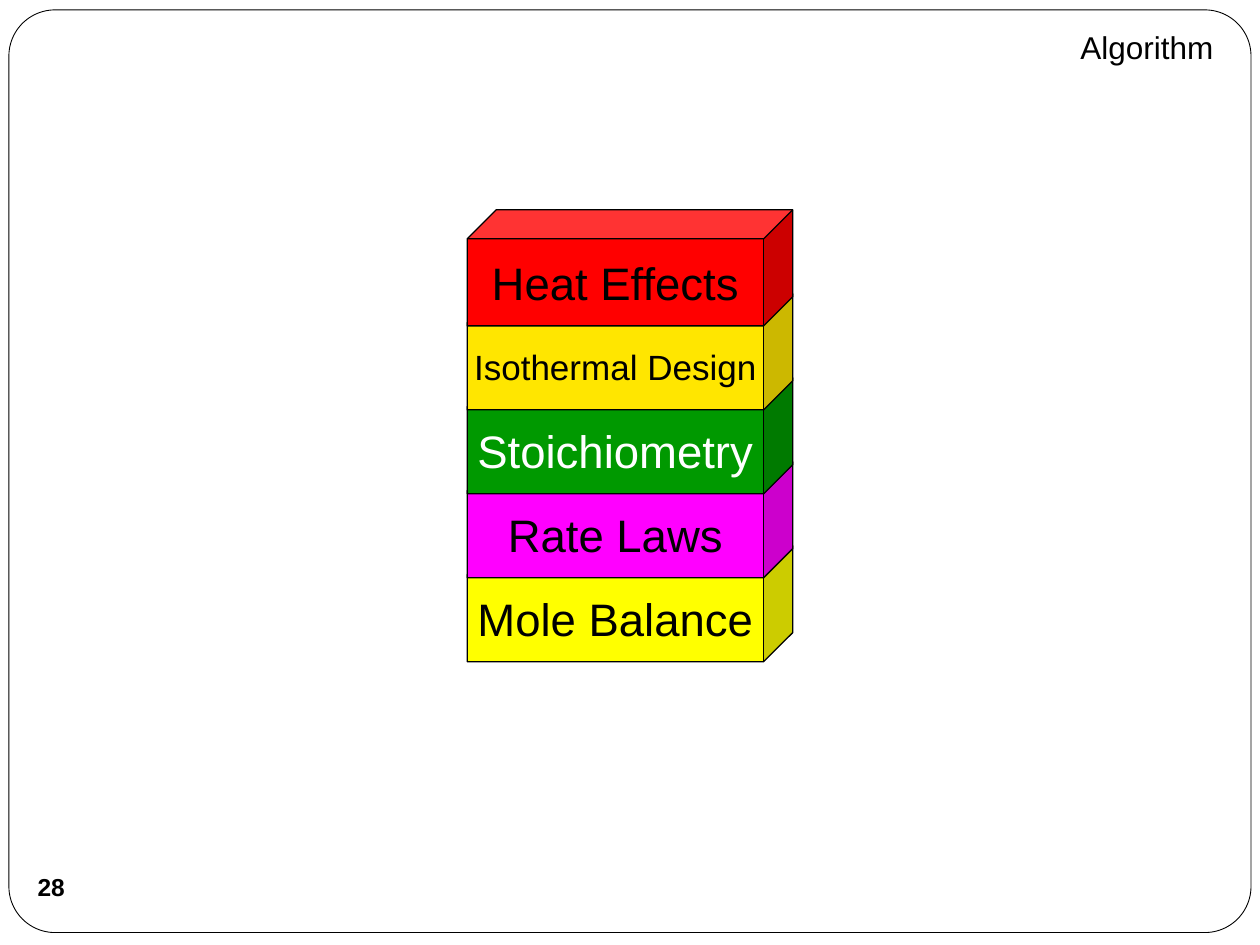
import pptx
import pptx.dml.color
import pptx.enum.shapes
import pptx.enum.text
import pptx.util

Cm = pptx.util.Cm
Pt = pptx.util.Pt
Shape = pptx.enum.shapes.MSO_SHAPE
Align = pptx.enum.text.PP_ALIGN
Anchor = pptx.enum.text.MSO_ANCHOR

BLOCKS = [
    ("Heat Effects", "FF0000", "000000", 26),
    ("Isothermal Design", "FFE600", "000000", 20),
    ("Stoichiometry", "009900", "FFFFFF", 26),
    ("Rate Laws", "FF00FF", "000000", 26),
    ("Mole Balance", "FFFF00", "000000", 26),
]


def color(value):
    return pptx.dml.color.RGBColor.from_string(value)


def add_figure(page, kind, box, fill, line_width=None):
    figure = page.shapes.add_shape(kind, *(Cm(length) for length in box))
    figure.shadow.inherit = False
    figure.fill.solid()
    figure.fill.fore_color.rgb = color(fill)
    if line_width is None:
        figure.line.fill.background()
    else:
        figure.line.color.rgb = color("000000")
        figure.line.width = Pt(line_width)
    return figure


def write(figure, text, size, ink="000000", align=Align.CENTER, bold=False,
          anchor=Anchor.MIDDLE, wrap=False):
    frame = figure.text_frame
    frame.word_wrap = wrap
    frame.vertical_anchor = anchor
    para = frame.paragraphs[0]
    para.text = text
    para.alignment = align
    para.font.name = "Arial"
    para.font.size = Pt(size)
    para.font.bold = bold
    para.font.color.rgb = color(ink)


def add_frame(page, box):
    frame = add_figure(page, Shape.ROUNDED_RECTANGLE, box, "FFFFFF", 0.5)
    frame.adjustments[0] = 0.05


def add_stack(page, box):
    left, top, width, height = box
    block_height = 2.34
    step = (height - block_height) / (len(BLOCKS) - 1)
    for index, (text, fill, ink, size) in reversed(list(enumerate(BLOCKS))):
        block_box = (left, top + index * step, width, block_height)
        block = add_figure(page, Shape.CUBE, block_box, fill, 0.75)
        block.adjustments[0] = 0.25
        write(block, text, size, ink)


def add_page_number(page, box, number):
    badge = add_figure(page, Shape.OVAL, box, "FFFFFF")
    frame = badge.text_frame
    frame.margin_left = frame.margin_right = 0
    frame.margin_top = frame.margin_bottom = 0
    write(badge, number, 14, bold=True)


def place_title(page, box, text):
    title = page.shapes.title
    title.left, title.top, title.width, title.height = (Cm(length) for length in box)
    title.text_frame.margin_right = Cm(0.43)
    write(title, text, 18, align=Align.RIGHT, anchor=Anchor.TOP, wrap=True)
    title.element.getparent().append(title.element)


def main():
    deck = pptx.Presentation()
    deck.slide_width = Cm(25.4)
    deck.slide_height = Cm(19.05)
    page = deck.slides.add_slide(deck.slide_layouts.get_by_name("Title Only"))
    add_frame(page, (0.18, 0.2, 25.04, 18.6))
    add_stack(page, (9.42, 4.23, 6.56, 9.11))
    add_page_number(page, (0.4, 17.25, 1.27, 1.27), "28")
    place_title(page, (17.88, 0.43, 7.01, 1.02), "Algorithm")
    deck.save("out.pptx")


if __name__ == "__main__":
    main()
